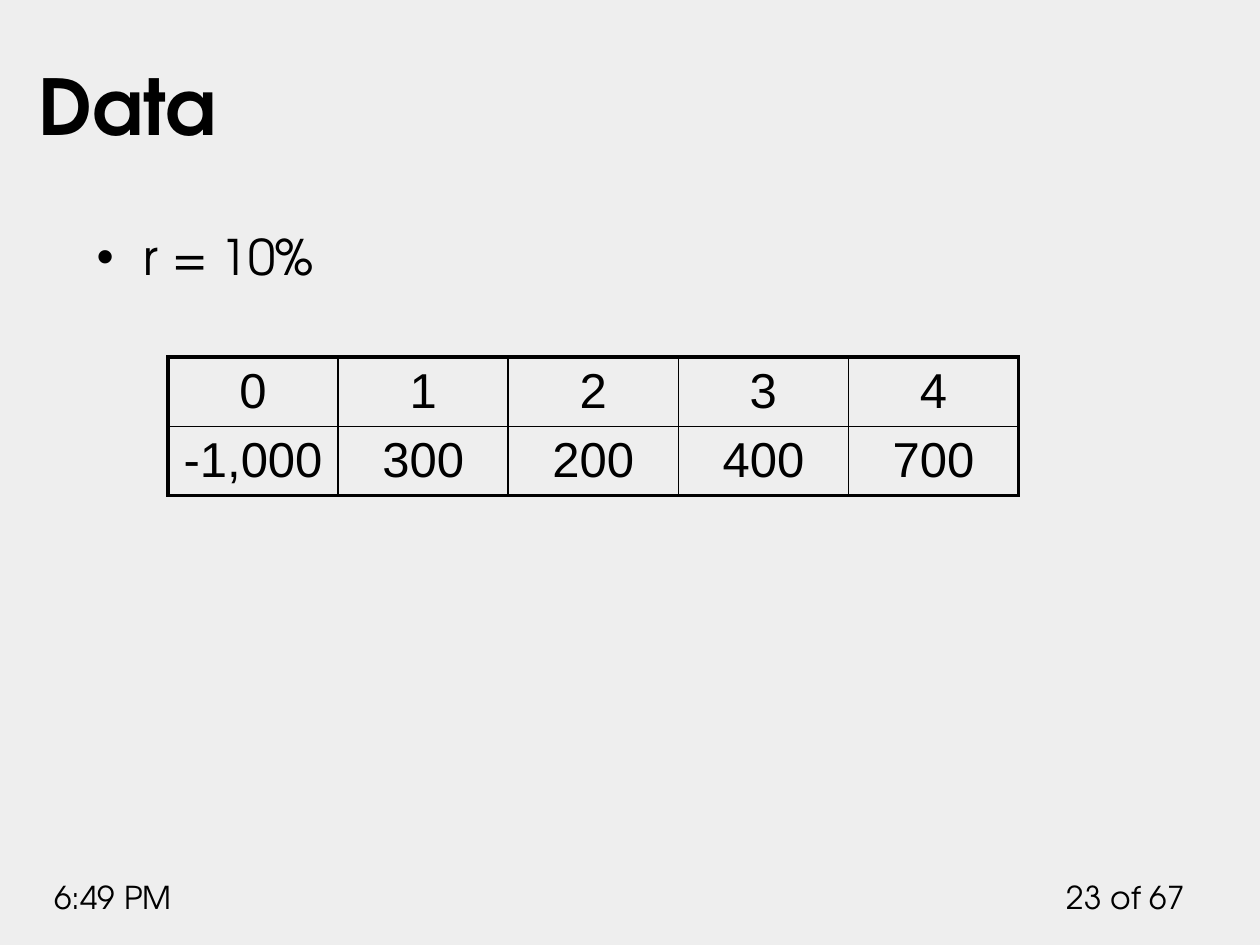
import pptx
import pptx.dml.color
import pptx.enum.text
import pptx.oxml.ns
import pptx.util
from lxml import etree

Pt = pptx.util.Pt
ALIGN = pptx.enum.text.PP_ALIGN
ANCHOR = pptx.enum.text.MSO_ANCHOR
COLORS = {"background": "EEEEEE", "ink": "000000"}
DISPLAY_FONT = "TeX Gyre Adventor"
TABLE_FONT = "Arial"
CASH_FLOWS = [
    ["0", "1", "2", "3", "4"],
    ["-1,000", "300", "200", "400", "700"],
]


def rgb(name):
    return pptx.dml.color.RGBColor.from_string(COLORS[name])


def place(shape, left, top, width, height):
    shape.left, shape.top = Pt(left), Pt(top)
    shape.width, shape.height = Pt(width), Pt(height)


def write(paragraph, text, size, font=DISPLAY_FONT, bold=False, align=ALIGN.LEFT):
    paragraph.alignment = align
    paragraph.space_before = Pt(0)
    run = paragraph.add_run()
    run.text = text
    run.font.name = font
    run.font.size = Pt(size)
    run.font.bold = bold
    run.font.color.rgb = rgb("ink")


def add_bullet(paragraph, indent):
    properties = paragraph._p.get_or_add_pPr()
    properties.set("marL", str(Pt(indent)))
    properties.set("indent", str(-Pt(indent)))
    bullet = etree.SubElement(properties, pptx.oxml.ns.qn("a:buChar"))
    bullet.set("char", "•")


def fill_title(slide, text):
    title = slide.shapes.title
    place(title, 15, 18, 631.5, 72)
    title.text_frame.vertical_anchor = ANCHOR.BOTTOM
    title.text_frame.auto_size = pptx.enum.text.MSO_AUTO_SIZE.NONE
    write(title.text_frame.paragraphs[0], text, 44, bold=True)


def fill_body(slide, text):
    body = slide.placeholders[1]
    place(body, 48, 126, 606, 348)
    body.text_frame.auto_size = pptx.enum.text.MSO_AUTO_SIZE.NONE
    paragraph = body.text_frame.paragraphs[0]
    add_bullet(paragraph, 27)
    write(paragraph, text, 28)


def add_footer(slide, text, left, width, align):
    box = slide.shapes.add_textbox(Pt(left), Pt(498), Pt(width), Pt(29))
    box.text_frame.word_wrap = True
    write(box.text_frame.paragraphs[0], text, 18, align=align)


def set_borders(cell, widths):
    """Draw cell borders; widths maps a:lnL, a:lnR, a:lnT, a:lnB to points."""
    qn = pptx.oxml.ns.qn
    properties = cell._tc.get_or_add_tcPr()
    for position, (tag, width) in enumerate(widths.items()):
        line = etree.Element(qn(tag), w=str(Pt(width)))
        fill = etree.SubElement(line, qn("a:solidFill"))
        etree.SubElement(fill, qn("a:srgbClr"), val=COLORS["ink"])
        properties.insert(position, line)


def add_cash_flow_table(slide, rows):
    row_count, column_count = len(rows), len(rows[0])
    row_height, column_width = 38.3, 97.2
    table = slide.shapes.add_table(
        row_count, column_count, Pt(96), Pt(204),
        Pt(column_width * column_count), Pt(row_height * row_count),
    ).table
    table.first_row = table.horz_banding = False
    for column in table.columns:
        column.width = Pt(column_width)
    for row_index, values in enumerate(rows):
        table.rows[row_index].height = Pt(row_height)
        for column_index, value in enumerate(values):
            cell = table.cell(row_index, column_index)
            cell.fill.background()
            cell.vertical_anchor = ANCHOR.MIDDLE
            cell.margin_top = cell.margin_bottom = Pt(3)
            write(cell.text_frame.paragraphs[0], value, 28, TABLE_FONT, align=ALIGN.CENTER)
            outer_edges = {
                "a:lnL": column_index == 0,
                "a:lnR": column_index == column_count - 1,
                "a:lnT": row_index == 0,
                "a:lnB": row_index == row_count - 1,
            }
            set_borders(cell, {tag: 2.25 if outer else 1 for tag, outer in outer_edges.items()})


def main():
    presentation = pptx.Presentation()
    presentation.slide_width, presentation.slide_height = Pt(720), Pt(540)
    slide = presentation.slides.add_slide(presentation.slide_layouts[1])
    slide.background.fill.solid()
    slide.background.fill.fore_color.rgb = rgb("background")

    add_footer(slide, "23 of 67", 600, 84, ALIGN.RIGHT)
    add_footer(slide, "6:49 PM", 24, 114, ALIGN.LEFT)
    fill_title(slide, "Data")
    fill_body(slide, "r = 10%")
    add_cash_flow_table(slide, CASH_FLOWS)
    presentation.save("out.pptx")


if __name__ == "__main__":
    main()
